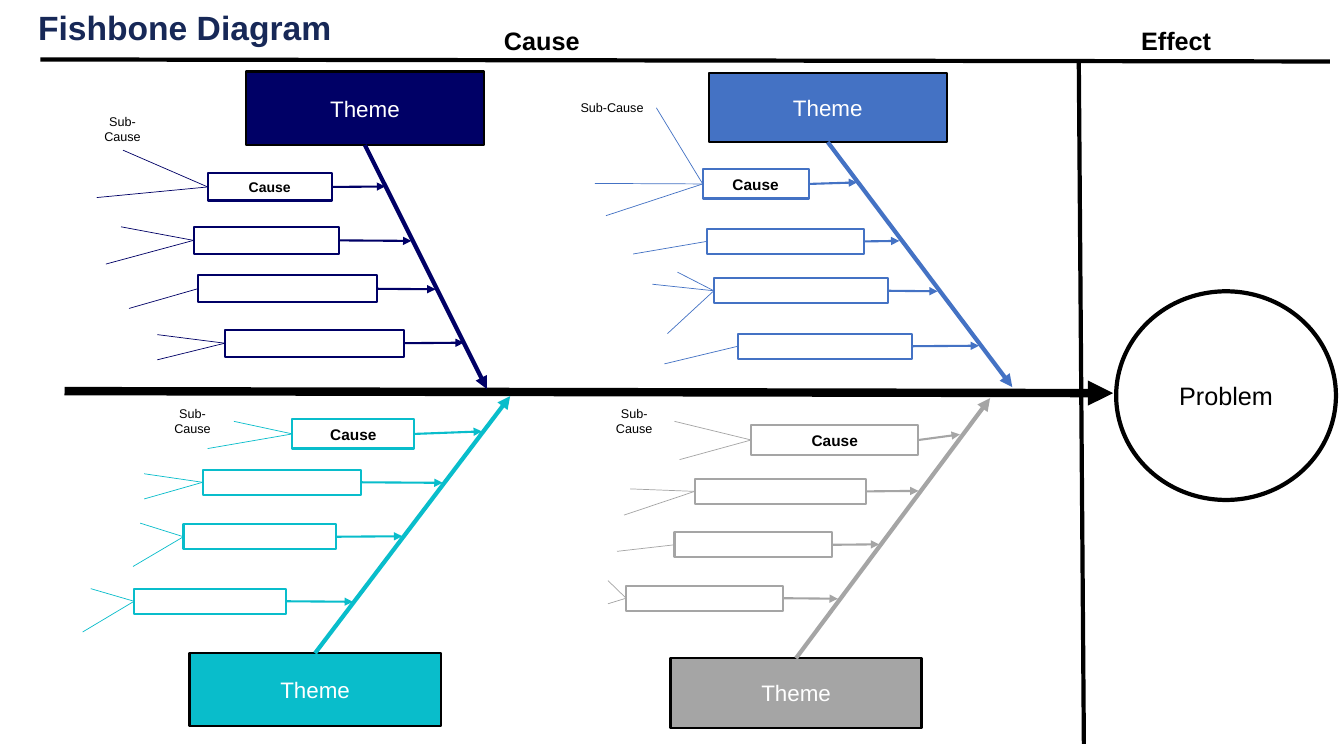
from dataclasses import dataclass
from typing import Any, Optional

from lxml import etree
from pptx import Presentation, util as u
from pptx.dml.color import RGBColor
from pptx.enum import shapes as es, text as et
from pptx.oxml.ns import qn

BLACK = RGBColor(0x00, 0x00, 0x00)
WHITE = RGBColor(0xFF, 0xFF, 0xFF)
TITLE = RGBColor(0x17, 0x28, 0x57)
NAVY = RGBColor(0x00, 0x00, 0x66)
BLUE = RGBColor(0x44, 0x72, 0xC4)
TEAL = RGBColor(0x09, 0xBD, 0xCB)
GRAY = RGBColor(0xA5, 0xA5, 0xA5)

Point = tuple[float, float]
Box = tuple[float, float, float, float]


@dataclass
class Row:
    box: Box
    tip: Point
    twigs: list[Point]


@dataclass
class Bone:
    color: RGBColor
    theme: Box
    side: int
    tip: Point
    size: int
    note: Box
    rows: list[Row]


BONES = [
    Bone(NAVY, (2.44, 0.71, 2.36, 0.73), 2, (4.83, 3.86), 10, (0.82, 1.08, 0.79, 0.4), [
        Row((2.06, 1.72, 1.23, 0.27), (3.82, 1.85), [(1.22, 1.49), (0.96, 1.96)]),
        Row((1.92, 2.25, 1.44, 0.27), (4.08, 2.39), [(1.2, 2.25), (1.05, 2.62)]),
        Row((1.96, 2.73, 1.78, 0.27), (4.32, 2.87), [(1.28, 3.06)]),
        Row((2.23, 3.27, 1.78, 0.27), (4.6, 3.4), [(1.56, 3.32), (1.56, 3.57)]),
    ]),
    Bone(BLUE, (7.03, 0.72, 2.36, 0.69), 2, (10.04, 3.84), 11, (5.63, 0.94, 0.88, 0.25), [
        Row((6.97, 1.68, 1.05, 0.29), (8.5, 1.81), [(6.51, 1.07), (5.9, 1.82), (6.01, 2.14)]),
        Row((7.01, 2.27, 1.56, 0.25), (8.92, 2.39), [(6.28, 2.52)]),
        Row((7.08, 2.76, 1.73, 0.25), (9.3, 2.89), [(6.72, 2.7), (6.47, 2.82), (6.62, 3.31)]),
        Row((7.32, 3.31, 1.73, 0.25), (9.71, 3.43), [(6.59, 3.61)]),
    ]),
    Bone(TEAL, (1.88, 6.48, 2.49, 0.72), 0, (5.06, 3.93), 11, (1.51, 3.98, 0.8, 0.4), [
        Row((2.9, 4.16, 1.21, 0.29), (4.78, 4.28), [(2.32, 4.18), (2.06, 4.45)]),
        Row((2.01, 4.66, 1.57, 0.25), (4.39, 4.79), [(1.43, 4.7), (1.43, 4.95)]),
        Row((1.82, 5.2, 1.51, 0.25), (3.99, 5.32), [(1.39, 5.19), (1.32, 5.62)]),
        Row((1.33, 5.84, 1.51, 0.25), (3.5, 5.97), [(0.9, 5.84), (0.82, 6.27)]),
    ]),
    Bone(GRAY, (6.65, 6.53, 2.49, 0.69), 0, (9.82, 3.95), 11, (5.89, 3.98, 0.8, 0.4), [
        Row((7.45, 4.22, 1.66, 0.29), (9.52, 4.31), [(6.69, 4.18), (6.74, 4.56)]),
        Row((6.89, 4.75, 1.7, 0.25), (9.11, 4.87), [(6.25, 4.85), (6.19, 5.11)]),
        Row((6.69, 5.28, 1.56, 0.25), (8.72, 5.4), [(6.12, 5.47)]),
        Row((6.21, 5.81, 1.56, 0.25), (8.31, 5.94), [(6.03, 5.76), (6.03, 5.99)]),
    ]),
]


def cm(*vals: float) -> list[int]:
    return [u.Cm(val * 2.54) for val in vals]


def write(shape: Any, words: str, size: int, color: RGBColor = BLACK,
          bold: bool = False, center: bool = True) -> None:
    frame = shape.text_frame
    frame.word_wrap = True
    frame.text = words
    para = frame.paragraphs[0]
    para.alignment = et.PP_ALIGN.CENTER if center else et.PP_ALIGN.LEFT
    font = para.runs[0].font
    font.name, font.size, font.bold = "Arial", u.Pt(size), bold
    font.color.rgb = color


def label(tree: Any, box: Box, words: str, size: int, color: RGBColor = BLACK,
          bold: bool = False, center: bool = False) -> None:
    write(tree.add_textbox(*cm(*box)), words, size, color, bold, center)


def block(tree: Any, box: Box, edge: RGBColor, width: float,
          fill: Optional[RGBColor] = None,
          kind: Any = es.MSO_SHAPE.RECTANGLE) -> Any:
    shape = tree.add_shape(kind, *cm(*box))
    shape.shadow.inherit = False
    if fill is None:
        shape.fill.background()
    else:
        shape.fill.solid()
        shape.fill.fore_color.rgb = fill
    shape.line.color.rgb = edge
    shape.line.width = u.Pt(width)
    shape.text_frame.vertical_anchor = et.MSO_ANCHOR.MIDDLE
    return shape


def line(tree: Any, start: Point, end: Point, color: RGBColor, width: float,
         arrow: bool = False) -> Any:
    link = tree.add_connector(es.MSO_CONNECTOR.STRAIGHT, *cm(*start, *end))
    link.line.color.rgb = color
    link.line.width = u.Pt(width)
    if arrow:
        etree.SubElement(link.line._get_or_add_ln(), qn("a:tailEnd"), type="triangle")
    etree.SubElement(link._element.spPr, qn("a:effectLst"))
    return link


def branch(tree: Any, shape: Any, box: Box, side: int, end: Point,
           color: RGBColor, width: float, arrow: bool = False) -> None:
    left, top, wide, high = box
    sites = [(left + wide / 2, top), (left, top + high / 2),
             (left + wide / 2, top + high), (left + wide, top + high / 2)]
    link = line(tree, sites[side], end, color, width, arrow)
    link.begin_connect(shape, side)


def draw(tree: Any, bone: Bone) -> None:
    theme = block(tree, bone.theme, BLACK, 1.5, bone.color)
    write(theme, "Theme", 16, WHITE)
    branch(tree, theme, bone.theme, bone.side, bone.tip, bone.color, 3, True)
    for i, row in enumerate(bone.rows):
        cause = block(tree, row.box, bone.color, 1.5)
        if i == 0:
            write(cause, "Cause", bone.size, bold=True)
        branch(tree, cause, row.box, 3, row.tip, bone.color, 1.5, True)
        for twig in row.twigs:
            branch(tree, cause, row.box, 1, twig, bone.color, 0.5)
    label(tree, bone.note, "Sub-Cause", 9, center=True)


def main() -> None:
    deck = Presentation()
    deck.slide_width, deck.slide_height = cm(13.33, 7.5)
    tree = deck.slides.add_slide(deck.slide_layouts[6]).shapes

    label(tree, (0.28, 0.02, 4.48, 0.5), "Fishbone Diagram", 24, TITLE, True)
    label(tree, (4.9, 0.2, 1.09, 0.4), "Cause", 18, bold=True)
    label(tree, (11.22, 0.2, 1.03, 0.4), "Effect", 18, bold=True)
    line(tree, (0.4, 0.59), (13.19, 0.61), BLACK, 3)
    line(tree, (10.7, 0.61), (10.75, 7.38), BLACK, 3)
    head = block(tree, (11.07, 2.89, 2.18, 2.07), BLACK, 3, WHITE, es.MSO_SHAPE.OVAL)
    write(head, "Problem", 18)
    line(tree, (0.64, 3.88), (11.04, 3.9), BLACK, 6, True)
    for bone in BONES:
        draw(tree.add_group_shape().shapes, bone)

    deck.save("out.pptx")


if __name__ == "__main__":
    main()
